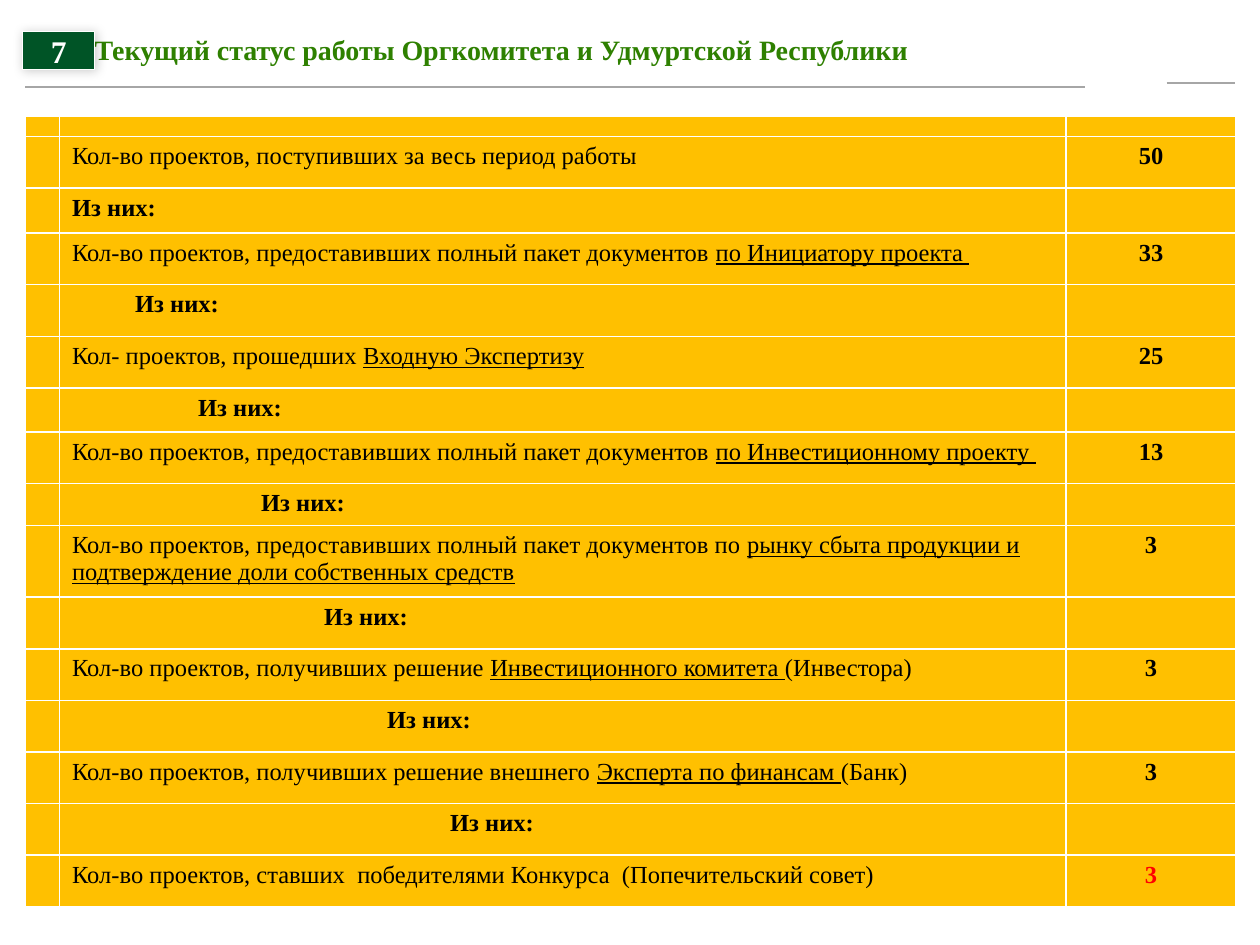
from lxml.etree import SubElement
from pptx import Presentation
from pptx.dml.color import RGBColor
from pptx.enum.shapes import MSO_CONNECTOR, MSO_SHAPE
from pptx.enum.text import MSO_ANCHOR, PP_ALIGN
from pptx.oxml import parse_xml
from pptx.oxml.ns import nsdecls, qn
from pptx.util import Cm, Pt

WHITE = RGBColor(0xFF, 0xFF, 0xFF)
BLACK = RGBColor(0x00, 0x00, 0x00)
RED = RGBColor(0xFF, 0x00, 0x00)
GRAY = RGBColor(0xA6, 0xA6, 0xA6)
GREEN = RGBColor(0x2E, 0x80, 0x00)
DARK_GREEN = RGBColor(0x00, 0x54, 0x26)
AMBER = RGBColor(0xFF, 0xC0, 0x00)

FULL_PACKAGE = "Кол-во проектов, предоставивших полный пакет документов "
# Each stage: plain text, underlined text, plain ending, count
STAGES = [
    ("Кол-во проектов, поступивших за весь период работы", "", "", 50),
    (FULL_PACKAGE, "по Инициатору проекта ", "", 33),
    ("Кол- проектов, прошедших ", "Входную Экспертизу", "", 25),
    (FULL_PACKAGE, "по Инвестиционному проекту ", "", 13),
    (FULL_PACKAGE + "по ",
     "рынку сбыта продукции и подтверждение доли собственных средств", "", 3),
    ("Кол-во проектов, получивших решение ", "Инвестиционного комитета ", "(Инвестора)", 3),
    ("Кол-во проектов, получивших решение внешнего ", "Эксперта по финансам ", "(Банк)", 3),
    ("Кол-во проектов, ставших  победителями Конкурса  (Попечительский совет)", "", "", 3),
]
COL_WIDTHS = [0.69, 20.29, 3.43]
STAGE_HEIGHT = 1.04
HEADER_HEIGHT = 0.41
BETWEEN_HEIGHTS = [0.91, 1.04, 0.89, 0.84, 1.04, 1.04, 1.04]


def style(p, size, color, bold=False, align=None):
    p.alignment = align
    p.font.name = "Times New Roman"
    p.font.size = Pt(size)
    p.font.bold = bold
    p.font.color.rgb = color


def clear_margins(tf):
    tf.margin_left = tf.margin_top = tf.margin_right = tf.margin_bottom = 0
    tf.vertical_anchor = MSO_ANCHOR.MIDDLE


prs = Presentation()
prs.slide_width, prs.slide_height = Cm(25.4), Cm(19.05)
s = prs.slides.add_slide(prs.slide_layouts[6])

# Header rules
for left, right, y in [(0.51, 21.87, 1.75), (23.52, 24.89, 1.68)]:
    rule = s.shapes.add_connector(MSO_CONNECTOR.STRAIGHT, Cm(left), Cm(y), Cm(right), Cm(y))
    rule.line.color.rgb = GRAY
    rule.line.width = Pt(1)
    SubElement(rule._element.spPr, qn("a:effectLst"))

# Title
title = s.shapes.add_textbox(Cm(1.91), Cm(0.28), Cm(19.66), Cm(1.42))
tf = title.text_frame
tf.word_wrap = True
clear_margins(tf)
tf.text = "Текущий статус работы Оргкомитета и Удмуртской Республики"
style(tf.paragraphs[0], 16, GREEN, bold=True)

# Slide number badge with a soft shadow
badge = s.shapes.add_shape(MSO_SHAPE.RECTANGLE, Cm(0.46), Cm(0.64), Cm(1.45), Cm(0.76))
badge.fill.solid()
badge.fill.fore_color.rgb = DARK_GREEN
badge.line.color.rgb = WHITE
badge.line.width = Pt(0.75)
badge._element.spPr.append(parse_xml(
    f'<a:effectLst {nsdecls("a")}>'
    '<a:outerShdw blurRad="76200" dist="12700" dir="2700000">'
    '<a:srgbClr val="000000"><a:alpha val="20000"/></a:srgbClr>'
    '</a:outerShdw></a:effectLst>'))
tf = badge.text_frame
clear_margins(tf)
tf.text = "7"
style(tf.paragraphs[0], 18, WHITE, bold=True, align=PP_ALIGN.CENTER)

# Status table: header row, then stages alternating with "Из них:" rows
heights = [HEADER_HEIGHT, STAGE_HEIGHT]
for height in BETWEEN_HEIGHTS:
    heights += [height, STAGE_HEIGHT]
table = s.shapes.add_table(len(heights), len(COL_WIDTHS), Cm(0.51), Cm(2.34),
                           Cm(sum(COL_WIDTHS)), Cm(sum(heights))).table
table.horz_banding = False
for column, width in zip(table.columns, COL_WIDTHS):
    column.width = Cm(width)
for row, height in zip(table.rows, heights):
    row.height = Cm(height)
    for cell in row.cells:
        cell.fill.solid()
        cell.fill.fore_color.rgb = AMBER
        style(cell.text_frame.paragraphs[0], 14, BLACK)
for cell in table.rows[0].cells:
    cell.margin_top = cell.margin_bottom = 0
    cell.text_frame.paragraphs[0].font.size = Pt(8)

for i, (start, underlined, ending, count) in enumerate(STAGES):
    row = 2 * i + 1
    p = table.cell(row, 1).text_frame.paragraphs[0]
    for text in filter(None, (start, underlined, ending)):
        r = p.add_run()
        r.text = text
        if text == underlined:
            r.font.underline = True

    p = table.cell(row, 2).text_frame.paragraphs[0]
    p.text = str(count)
    last = i == len(STAGES) - 1
    style(p, 14, RED if last else BLACK, bold=True, align=PP_ALIGN.CENTER)

    if not last:
        p = table.cell(row + 1, 1).text_frame.paragraphs[0]
        p.text = "Из них:"
        style(p, 14, BLACK, bold=True, align=PP_ALIGN.JUSTIFY if i > 1 else None)
        p.level = i
        p._p.get_or_add_pPr().set("marL", str(Cm(1.27 * i)))

prs.save("out.pptx")
